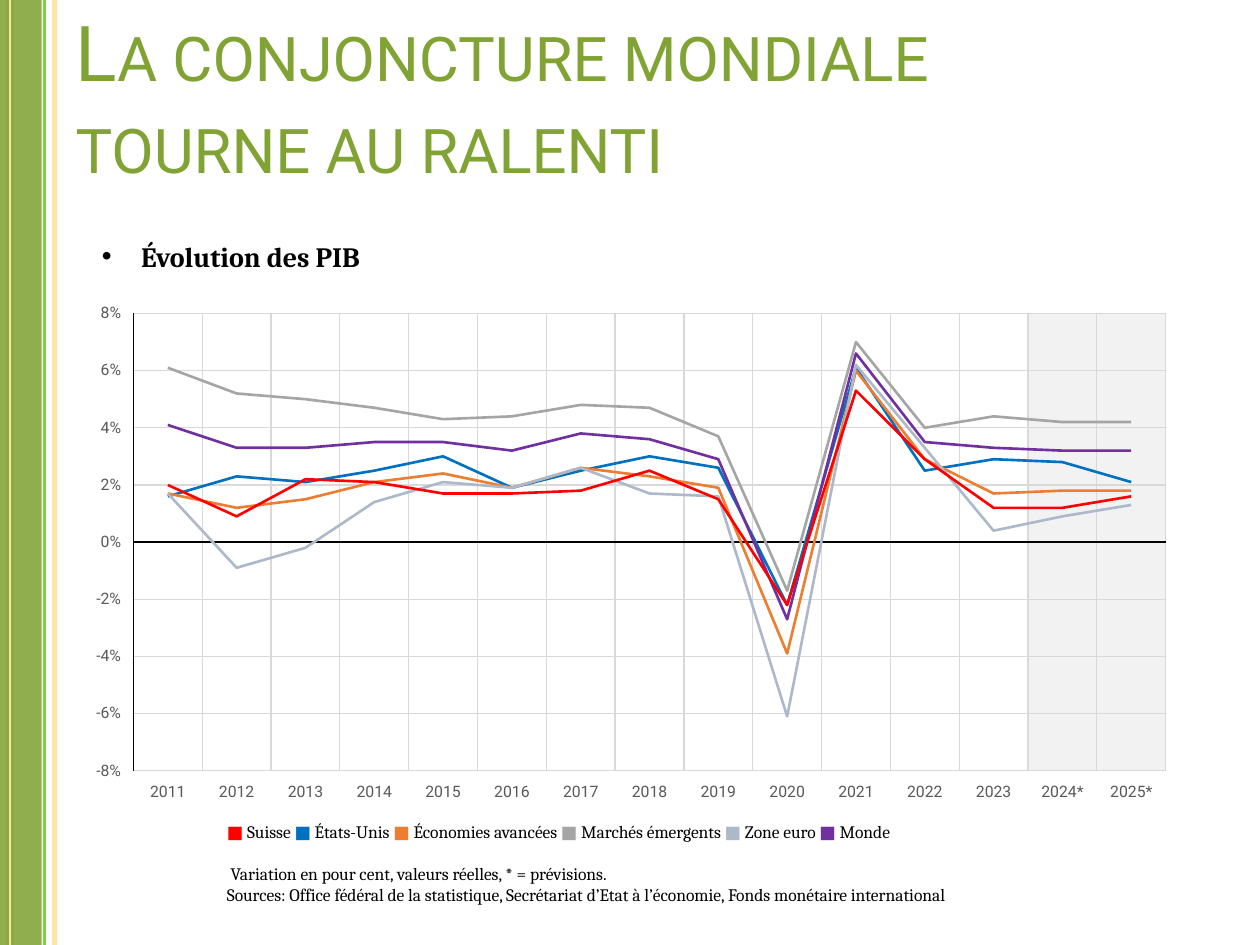
from dataclasses import dataclass

from lxml import etree
from pptx import Presentation
from pptx import util as u
from pptx.chart.data import CategoryChartData
from pptx.dml.color import RGBColor
from pptx.enum import chart as ch, shapes, text
from pptx.oxml import parse_xml
from pptx.oxml.ns import nsdecls, qn


@dataclass(frozen=True)
class Theme:
    green: str = "81A334"
    lime: str = "7FD13B"
    pale: str = "C0E5AF"
    cream: str = "FFE39D"
    black: str = "000000"
    label: str = "595959"
    grid: str = "D9D9D9"
    shade: str = "F2F2F2"
    sans: str = "Roboto"
    serif: str = "Cambria"
    title: int = 44
    head: int = 16
    note: int = 10
    tick: int = 9


T = Theme()
YEARS = [str(y) for y in range(2011, 2024)] + ["2024*", "2025*"]

# Name, colour and yearly growth in per cent, from back to front
SERIES = [
    ("États-Unis", "0070C0", [1.6, 2.3, 2.1, 2.5, 3.0, 1.9, 2.5, 3.0, 2.6,
                              -2.2, 6.1, 2.5, 2.9, 2.8, 2.1]),
    ("Économies avancées", "ED7D31", [1.7, 1.2, 1.5, 2.1, 2.4, 1.9, 2.6, 2.3,
                                      1.9, -3.9, 6.0, 2.9, 1.7, 1.8, 1.8]),
    ("Marchés émergents", "A5A5A5", [6.1, 5.2, 5.0, 4.7, 4.3, 4.4, 4.8, 4.7,
                                     3.7, -1.7, 7.0, 4.0, 4.4, 4.2, 4.2]),
    ("Zone euro", "ADB9CA", [1.7, -0.9, -0.2, 1.4, 2.1, 1.9, 2.6, 1.7, 1.6,
                             -6.1, 6.2, 3.3, 0.4, 0.9, 1.3]),
    ("Monde", "7030A0", [4.1, 3.3, 3.3, 3.5, 3.5, 3.2, 3.8, 3.6, 2.9,
                         -2.7, 6.6, 3.5, 3.3, 3.2, 3.2]),
    ("Suisse", "FF0000", [2.0, 0.9, 2.2, 2.1, 1.7, 1.7, 1.8, 2.5, 1.5,
                          -2.2, 5.3, 2.9, 1.2, 1.2, 1.6]),
]
NOTES = [
    " Variation en pour cent, valeurs réelles, * = prévisions.",
    "Sources: Office fédéral de la statistique, Secrétariat d’Etat à "
    "l’économie, Fonds monétaire international",
]

# Chart frame and plot area in cm: left, top, width, height
FRAME = (1.5, 5.8, 22.5, 10.6)
PLOT = (2.69, 6.32, 20.81, 9.22)


def rgb(code):
    return RGBColor.from_string(code)


def style(font, size, color, face, bold=False):
    font.size, font.name, font.bold = u.Pt(size), face, bold
    font.color.rgb = rgb(color)


def fade(shape, part, alpha):
    """Make the fill or line colour of a shape partly transparent."""
    color = shape._element.spPr.find(".//" + part + qn("a:srgbClr"))
    etree.SubElement(color, qn("a:alpha")).set("val", str(alpha * 1000))


def place(shape, left, top, width, height):
    shape.left, shape.top = u.Cm(left), u.Cm(top)
    shape.width, shape.height = u.Cm(width), u.Cm(height)


def block(slide, left, top, width, height, color):
    box = slide.shapes.add_shape(shapes.MSO_SHAPE.RECTANGLE, u.Cm(left),
                                 u.Cm(top), u.Cm(width), u.Cm(height))
    box.shadow.inherit = False
    box.fill.solid()
    box.fill.fore_color.rgb = rgb(color)
    box.line.fill.background()
    return box


def stripe(slide, x, color, width, top=0):
    line = slide.shapes.add_connector(shapes.MSO_CONNECTOR.STRAIGHT, u.Cm(x),
                                      u.Cm(top), u.Cm(x), u.Cm(19.05))
    line.line.color.rgb = rgb(color)
    line.line.width = u.Pt(width)
    etree.SubElement(line._element.spPr, qn("a:effectLst"))
    return line


def band(slide):
    fade(stripe(slide, 1.1, T.cream, 3, -0.2), "", 93)
    stripe(slide, 0.2, T.pale, 4.5)
    stripe(slide, 0.9, T.lime, 1.5)
    fade(block(slide, 0, 0, 0.84, 19.05, T.green), "", 87)
    stripe(slide, 0.2, T.cream, 0.75)


def heading(slide):
    box = slide.shapes.title
    place(box, 1.27, 0.76, 20.75, 3.18)
    frame = box.text_frame
    frame.auto_size = text.MSO_AUTO_SIZE.NONE
    frame.vertical_anchor = text.MSO_ANCHOR.BOTTOM
    frame.text = "La conjoncture mondiale tourne au ralenti"
    para = frame.paragraphs[0]
    para.alignment = text.PP_ALIGN.LEFT
    style(para.font, T.title, T.green, T.sans)
    para._p.pPr.find(qn("a:defRPr")).set("cap", "small")


def indent(para, left, hang=0, bullet=None, before=0):
    props = para._p.get_or_add_pPr()
    props.set("marL", str(u.Cm(left)))
    props.set("indent", str(-u.Cm(hang)))
    mark = etree.SubElement(props, qn("a:buChar" if bullet else "a:buNone"))
    if bullet:
        mark.set("char", bullet)
    para.space_before = u.Pt(before)


def body(slide):
    box = slide.placeholders[1]
    place(box, 1.8, 4.7, 21.8, 13.84)
    frame = box.text_frame
    frame.auto_size = text.MSO_AUTO_SIZE.NONE

    head = frame.paragraphs[0]
    head.text = "Évolution des PIB"
    indent(head, 0.79, 0.79, "•")
    style(head.font, T.head, T.black, T.serif, True)

    # Colour key below the chart, front series first
    key = frame.add_paragraph()
    indent(key, 2.52, before=313)
    for name, color, _ in SERIES[-1:] + SERIES[:-1]:
        for words, tint in (("■", color), (f" {name} ", T.black)):
            run = key.add_run()
            run.text = words
            style(run.font, T.note, tint, T.serif, words == "■")

    for words, gap in zip(NOTES, (12, 0)):
        note = frame.add_paragraph()
        note.text = words
        indent(note, 2.52, before=gap)
        style(note.font, T.note, T.black, T.serif)


def axis(ax):
    ax.has_major_gridlines = True
    ax.major_gridlines.format.line.color.rgb = rgb(T.grid)
    ax.major_gridlines.format.line.width = u.Pt(0.75)
    ax.major_tick_mark = ax.minor_tick_mark = ch.XL_TICK_MARK.NONE
    ax.tick_label_position = ch.XL_TICK_LABEL_POSITION.LOW
    ax.format.line.color.rgb = rgb(T.black)
    ax.format.line.width = u.Pt(0.75)
    style(ax.tick_labels.font, T.tick, T.label, T.sans)


def layout(chart):
    """Fix the plot area and leave the background clear."""
    left, top, wide, high = FRAME
    parts = {"x": (PLOT[0] - left) / wide, "y": (PLOT[1] - top) / high,
             "w": PLOT[2] / wide, "h": PLOT[3] / high}
    modes = '<c:xMode val="edge"/><c:yMode val="edge"/>'
    sizes = "".join(f'<c:{k} val="{v:.4f}"/>' for k, v in parts.items())
    root = chart._chartSpace
    area = root.chart.plotArea
    for old in area.findall(qn("c:layout")):
        area.remove(old)
    area.insert(0, parse_xml(
        f'<c:layout {nsdecls("c")}><c:manualLayout><c:layoutTarget '
        f'val="inner"/>{modes}{sizes}</c:manualLayout></c:layout>'))
    root.chart.addnext(parse_xml(
        f'<c:spPr {nsdecls("c", "a")}><a:noFill/><a:ln><a:noFill/></a:ln>'
        '</c:spPr>'))


def graph(slide):
    # Shade the forecast years
    step = PLOT[2] / len(YEARS)
    block(slide, PLOT[0] + 13 * step, PLOT[1], 2 * step, PLOT[3], T.shade)

    data = CategoryChartData(number_format="0.0")
    data.categories = YEARS
    for name, _, values in SERIES:
        data.add_series(name, values)
    chart = slide.shapes.add_chart(ch.XL_CHART_TYPE.LINE,
                                   *map(u.Cm, FRAME), data).chart
    chart.has_legend = chart.has_title = False
    style(chart.font, T.tick, T.label, T.sans)
    layout(chart)
    axis(chart.category_axis)
    scale = chart.value_axis
    axis(scale)
    scale.minimum_scale, scale.maximum_scale, scale.major_unit = -8, 8, 2
    scale.tick_labels.number_format = '0"%"'
    scale.tick_labels.number_format_is_linked = False
    chart.plots[0].vary_by_categories = False
    for line, (_, color, _) in zip(chart.plots[0].series, SERIES):
        line.smooth = False
        line.marker.style = ch.XL_MARKER_STYLE.NONE
        line.format.line.color.rgb = rgb(color)
        line.format.line.width = u.Pt(1.5)


def main():
    deck = Presentation()
    deck.slide_width, deck.slide_height = u.Cm(25.4), u.Cm(19.05)
    slide = deck.slides.add_slide(deck.slide_layouts[1])
    band(slide)
    heading(slide)
    body(slide)
    graph(slide)
    deck.save("out.pptx")


if __name__ == "__main__":
    main()
